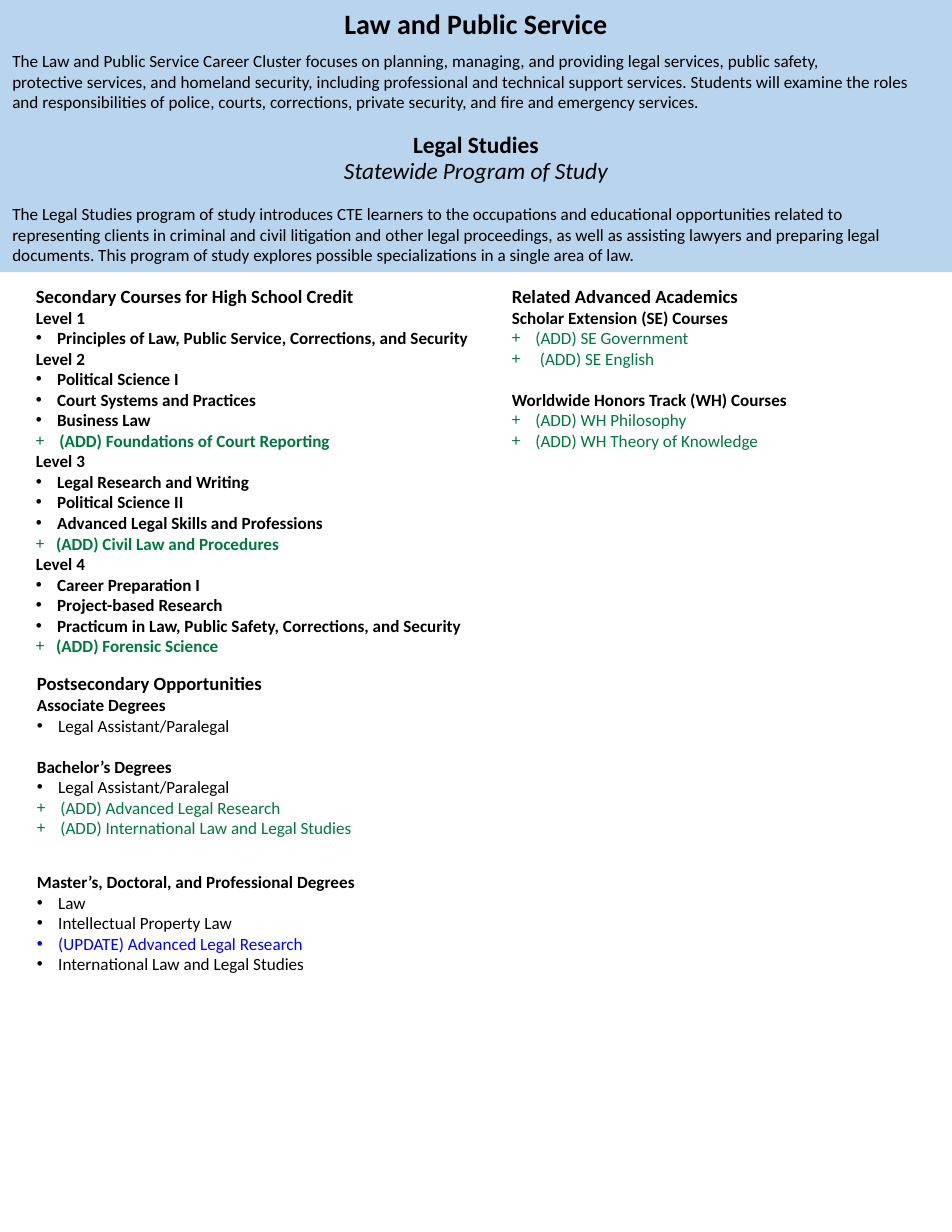
from lxml import etree
from pptx import Presentation
from pptx.dml.color import RGBColor
from pptx.enum.shapes import MSO_SHAPE
from pptx.enum.text import MSO_ANCHOR, MSO_AUTO_SIZE, PP_ALIGN
from pptx.oxml.ns import qn
from pptx.util import Inches, Pt

LEFT, CENTER = PP_ALIGN.LEFT, PP_ALIGN.CENTER
TOP, MIDDLE = MSO_ANCHOR.TOP, MSO_ANCHOR.MIDDLE
RECTANGLE = MSO_SHAPE.RECTANGLE
NO_AUTOFIT = MSO_AUTO_SIZE.NONE
HARD_SPACE = chr(160)  # keeps two words on one line

THEME = {
    "font": "Calibri",
    "banner": RGBColor(0xB9, 0xD4, 0xED),
    "text": RGBColor(0, 0, 0),
    "added": RGBColor(0x00, 0x77, 0x42),
    "updated": RGBColor(0, 0, 0xFF),
    "cluster": Pt(18),
    "program": Pt(15),
    "section": Pt(12),
    "body": Pt(11),
}

# kind of line: (bullet, hanging indent in inches, colour, size, bold)
LINE_KINDS = {
    "section": (None, 0, "text", "section", True),
    "heading": (None, 0, "text", "body", True),
    "item": ("•", 0.19, "text", "body", False),
    "update": ("•", 0.19, "updated", "body", False),
    "add": ("+", 0.21, "added", "body", False),
    "add near": ("+", 0.18, "added", "body", False),
    "add far": ("+", 0.25, "added", "body", False),
}
BULLET_FONTS = {"•": "Arial", "+": THEME["font"]}


def write_paragraph(frame, text, size, first=False, color="text", bold=False, italic=False,
                    align=LEFT, line=1.0, before=0, after=0):
    paragraph = frame.paragraphs[0] if first else frame.add_paragraph()
    spacing = {"alignment": align, "line_spacing": line,
               "space_before": Pt(before), "space_after": Pt(after)}
    for attribute, value in spacing.items():
        setattr(paragraph, attribute, value)
    run = paragraph.add_run()
    run.text = text
    run.font.color.rgb = THEME[color]
    for attribute, value in {"name": THEME["font"], "size": THEME[size],
                             "bold": bold, "italic": italic}.items():
        setattr(run.font, attribute, value)
    return paragraph


def write_list(frame, lines, all_bold=False):
    """Write (kind, text) or (kind, text, gap above in points) lines."""
    frame.word_wrap = True
    frame.auto_size = NO_AUTOFIT
    frame.vertical_anchor = TOP
    for index, (kind, text, *gap) in enumerate(lines):
        bullet, indent, color, size, bold = LINE_KINDS[kind]
        paragraph = write_paragraph(frame, text, size, index == 0, color, bold or all_bold,
                                    before=gap[0] if gap else 0)
        properties = paragraph._p.get_or_add_pPr()
        properties.set("marL", str(Inches(indent)))
        properties.set("indent", str(-Inches(indent)))
        if bullet:
            etree.SubElement(properties, qn("a:buFont")).set("typeface", BULLET_FONTS[bullet])
            etree.SubElement(properties, qn("a:buChar")).set("char", bullet)
        else:
            etree.SubElement(properties, qn("a:buNone"))


prs = Presentation()
prs.slide_width, prs.slide_height = Inches(8.5), Inches(11)
slide = prs.slides.add_slide(prs.slide_layouts[3])
program_title, secondary, academics = slide.placeholders
postsecondary = slide.shapes.add_textbox(0, 0, 0, 0)

for area, box in (
    (program_title, (0, 1.07, 8.5, 0.7)),
    (secondary, (0.22, 2.49, 4.13, 3.46)),
    (academics, (4.47, 2.49, 3.63, 1.52)),
    (postsecondary, (0.22, 5.94, 3.9, 2.74)),
):
    area.left, area.top, area.width, area.height = map(Inches, box)

# Program title
program_title.fill.solid()
program_title.fill.fore_color.rgb = THEME["banner"]
title_frame = program_title.text_frame
title_frame.auto_size = NO_AUTOFIT
title_frame.vertical_anchor = MIDDLE
write_paragraph(title_frame, "Legal Studies", "program", True, bold=True, align=CENTER, line=0.9)
write_paragraph(title_frame, "Statewide Program of Study", "program", italic=True,
                align=CENTER, line=0.9)

# Banners above and below the program title
margins = {"margin_left": Inches(0.11), "margin_right": Inches(0.11),
           "margin_top": Inches(0.06), "margin_bottom": Inches(0.06)}
banner_frames = []
for top, height in ((0, 1.07), (1.76, 0.67)):
    banner = slide.shapes.add_shape(RECTANGLE, 0, Inches(top), Inches(8.5), Inches(height))
    banner.shadow.inherit = False
    banner.fill.solid()
    banner.fill.fore_color.rgb = THEME["banner"]
    banner.line.fill.background()
    banner.text_frame.word_wrap = True
    banner.text_frame.vertical_anchor = TOP
    banner_frames.append(banner.text_frame)
for frame in (*banner_frames, postsecondary.text_frame):
    for attribute, value in margins.items():
        setattr(frame, attribute, value)

cluster_frame, program_frame = banner_frames
write_paragraph(cluster_frame, "Law and Public Service", "cluster", True, bold=True,
                align=CENTER, after=6.6)
write_paragraph(
    cluster_frame,
    "The Law and Public Service Career Cluster focuses on planning, managing, and providing "
    f"legal services, public safety, protective{HARD_SPACE}services, and homeland security, "
    "including professional and technical support services. Students will examine the roles "
    f"and{HARD_SPACE}responsibilities of police, courts, corrections, private security, and "
    "fire and emergency services.", "body", after=6.6)
write_paragraph(
    program_frame,
    "The Legal Studies program of study introduces CTE learners to the occupations and "
    f"educational opportunities related to representing{HARD_SPACE}clients in criminal and "
    "civil litigation and other legal proceedings, as well as assisting lawyers and preparing "
    f"legal documents. This{HARD_SPACE}program of study explores possible specializations in "
    "a single area of law.", "body", True)

# Course and degree lists
write_list(secondary.text_frame, [
    ("section", "Secondary Courses for High School Credit"),
    ("heading", "Level 1"),
    ("item", "Principles of Law, Public Service, Corrections, and Security"),
    ("heading", "Level 2"),
    ("item", "Political Science I"),
    ("item", "Court Systems and Practices"),
    ("item", "Business Law"),
    ("add", "(ADD) Foundations of Court Reporting"),
    ("heading", "Level 3"),
    ("item", "Legal Research and Writing"),
    ("item", "Political Science II"),
    ("item", "Advanced Legal Skills and Professions"),
    ("add near", "(ADD) Civil Law and Procedures"),
    ("heading", "Level 4"),
    ("item", "Career Preparation I"),
    ("item", "Project-based Research"),
    ("item", "Practicum in Law, Public Safety, Corrections, and Security"),
    ("add near", "(ADD) Forensic Science"),
], all_bold=True)
write_list(academics.text_frame, [
    ("section", "Related Advanced Academics"),
    ("heading", "Scholar Extension (SE) Courses"),
    ("add", "(ADD) SE Government"),
    ("add far", "(ADD) SE English"),
    ("heading", "Worldwide Honors Track (WH) Courses", 13.2),
    ("add", "(ADD) WH Philosophy"),
    ("add", "(ADD) WH Theory of Knowledge"),
])
write_list(postsecondary.text_frame, [
    ("section", "Postsecondary Opportunities"),
    ("heading", "Associate Degrees"),
    ("item", "Legal Assistant/Paralegal"),
    ("heading", "Bachelor’s Degrees", 13.2),
    ("item", "Legal Assistant/Paralegal"),
    ("add", "(ADD) Advanced Legal Research"),
    ("add", "(ADD) International Law and Legal Studies"),
    ("heading", "Master’s, Doctoral, and Professional Degrees", 21.5),
    ("item", "Law"),
    ("item", "Intellectual Property Law"),
    ("update", "(UPDATE) Advanced Legal Research"),
    ("item", "International Law and Legal Studies"),
])

prs.save("out.pptx")
